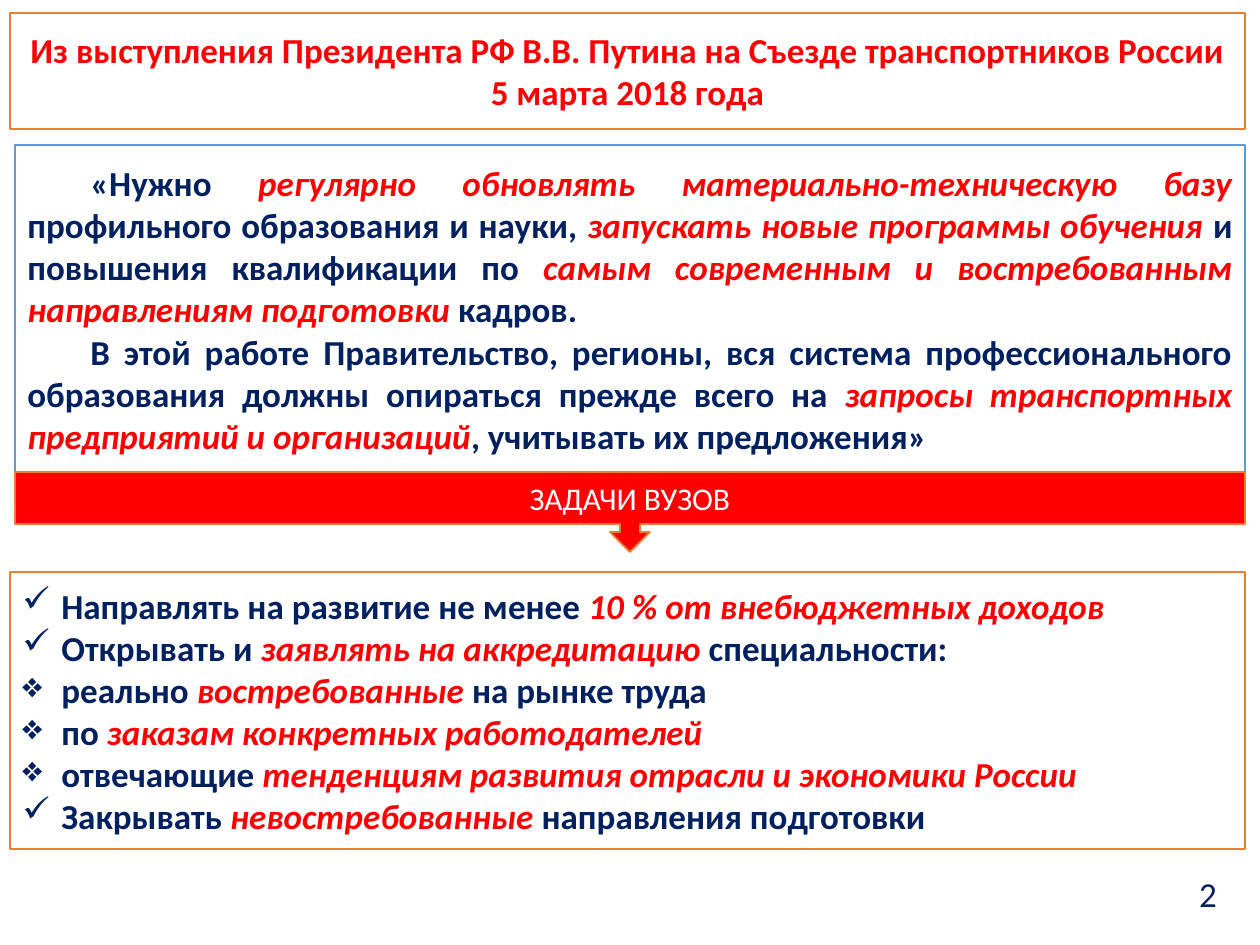
"""Build the slide on the tasks set for universities by the transport congress."""
from lxml.etree import SubElement
from pptx import Presentation
from pptx.dml.color import RGBColor
from pptx.enum.shapes import MSO_SHAPE as Shape
from pptx.enum.text import MSO_ANCHOR as Anchor, PP_ALIGN as Align
from pptx.oxml.ns import qn
from pptx.util import Emu, Pt

PX = 914400 // 126
RED = RGBColor(0xFF, 0x00, 0x00)
NAVY = RGBColor(0x00, 0x20, 0x60)
WHITE = RGBColor(0xFF, 0xFF, 0xFF)
ORANGE = RGBColor(0xED, 0x7D, 0x31)
BLUE = RGBColor(0x5B, 0x9B, 0xD5)
FONT = "Calibri"

TITLE = [
    "Из выступления Президента РФ В.В. Путина на Съезде транспортников России",
    "5 марта 2018 года",
]
QUOTE = [
    "«Нужно *регулярно обновлять материально-техническую базу *профильного образования и науки, "
    "*запускать новые программы обучения *и повышения квалификации по "
    "*самым современным и востребованным направлениям подготовки *кадров.",
    "В этой работе Правительство, регионы, вся система профессионального образования должны "
    "опираться прежде всего на *запросы транспортных предприятий и организаций*, "
    "учитывать их предложения»",
]
TASKS = [
    ("✓", "Направлять на развитие не менее *10 % от внебюджетных доходов"),
    ("✓", "Открывать и *заявлять на аккредитацию *специальности:"),
    ("❖", "реально *востребованные *на рынке труда"),
    ("❖", "по *заказам конкретных работодателей"),
    ("❖", "отвечающие *тенденциям развития отрасли и экономики России"),
    ("✓", "Закрывать *невостребованные *направления подготовки"),
]

BOLD_NAVY = {"size": 20, "bold": True, "color": NAVY}
BLOCKS = [
    {"box": (10, 13, 1235, 116), "line": ORANGE, "text": TITLE,
     "font": {"size": 20, "bold": True, "color": RED}},
    {"box": (15, 145, 1230, 328), "line": BLUE, "text": QUOTE, "font": BOLD_NAVY,
     "align": Align.JUSTIFY, "indent": (0, 63)},
    {"box": (15, 472, 1230, 80), "line": ORANGE, "text": ["ЗАДАЧИ ВУЗОВ"], "fill": RED,
     "kind": Shape.DOWN_ARROW_CALLOUT, "font": {"size": 18, "bold": False, "color": WHITE}},
    {"box": (10, 572, 1235, 277), "line": ORANGE, "text": TASKS, "font": BOLD_NAVY,
     "align": Align.LEFT, "indent": (39, -39)},
    {"box": (1176, 870, 64, 47), "text": ["2"],
     "font": {"size": 20, "bold": False, "color": NAVY}},
]


def add_runs(paragraph, text, style):
    """Add runs, with every second part between asterisks in red italics."""
    for index, part in enumerate(text.split("*")):
        emphasis = index % 2 == 1
        run = paragraph.add_run()
        run.text = part
        formats = {"name": FONT, "size": Pt(style["size"]),
                   "bold": style["bold"], "italic": emphasis}
        for name, value in formats.items():
            setattr(run.font, name, value)
        run.font.color.rgb = RED if emphasis else style["color"]


def add_block(slide, block):
    """Add one box with its paragraphs."""
    shape = slide.shapes.add_shape(block.get("kind", Shape.RECTANGLE),
                                   *(Emu(value * PX) for value in block["box"]))
    shape.shadow.inherit = False
    shape.fill.solid()
    shape.fill.fore_color.rgb = block.get("fill", WHITE)
    if "line" in block:
        shape.line.color.rgb = block["line"]
        shape.line.width = Pt(1)
    else:
        shape.line.fill.background()
    frame = shape.text_frame
    frame.word_wrap = True
    frame.vertical_anchor = Anchor.MIDDLE
    for index, item in enumerate(block["text"]):
        paragraph = frame.add_paragraph() if index else frame.paragraphs[0]
        paragraph.alignment = block.get("align", Align.CENTER)
        bullet, text = item if isinstance(item, tuple) else (None, item)
        margin, indent = block.get("indent", (0, 0))
        properties = paragraph._p.get_or_add_pPr()
        properties.set("marL", str(margin * PX))
        properties.set("indent", str(indent * PX))
        if bullet:
            SubElement(properties, qn("a:buChar")).set("char", bullet)
        add_runs(paragraph, text, block["font"])


def main():
    """Build and save the presentation."""
    presentation = Presentation()
    presentation.slide_width = Emu(1260 * PX)
    presentation.slide_height = Emu(945 * PX)
    slide = presentation.slides.add_slide(presentation.slide_layouts[6])
    for block in BLOCKS:
        add_block(slide, block)
    presentation.save("out.pptx")


if __name__ == "__main__":
    main()
